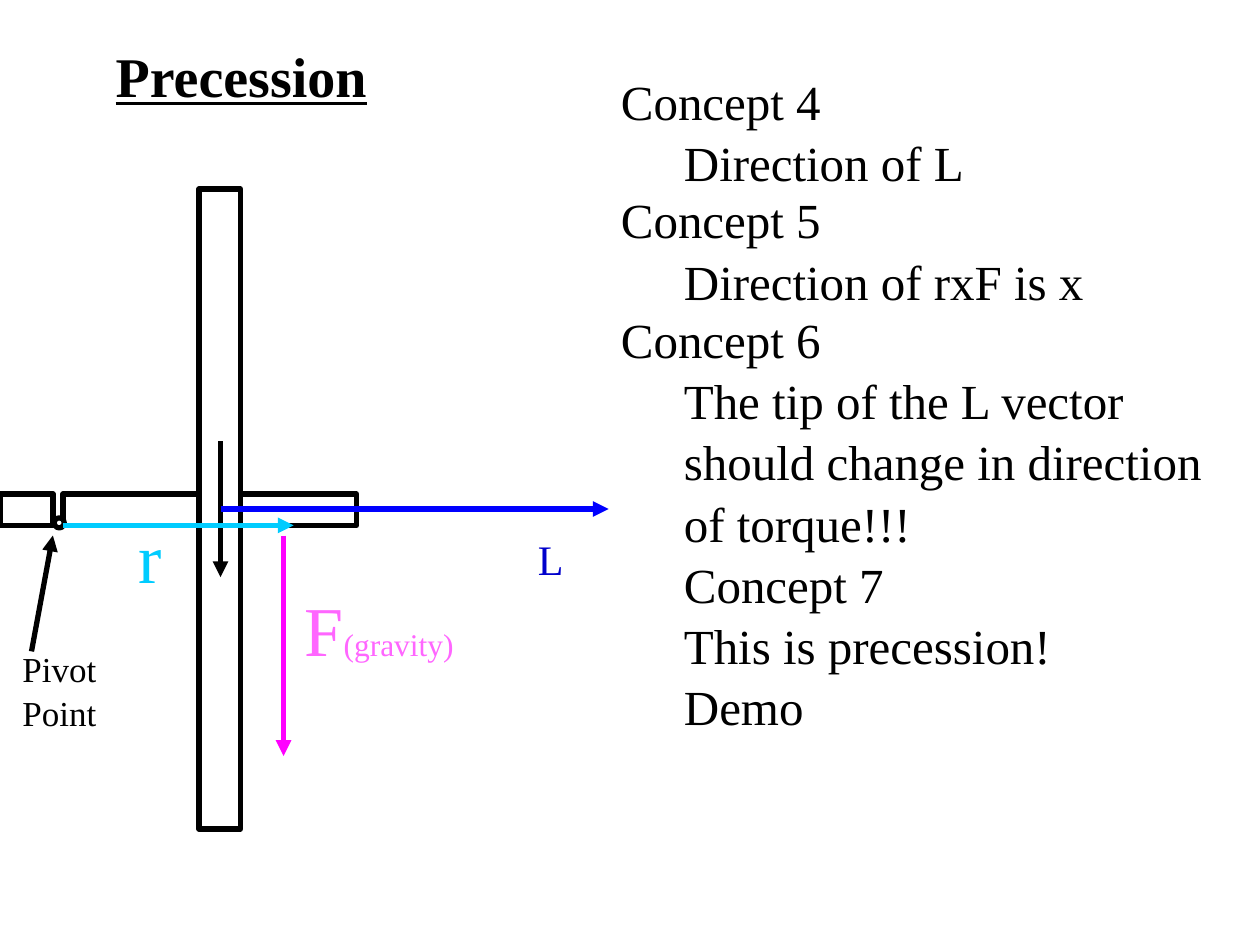
from dataclasses import dataclass

from lxml import etree
from pptx import Presentation
from pptx import util as u
from pptx.dml.color import RGBColor
from pptx.enum import shapes, text
from pptx.oxml import ns


@dataclass(frozen=True)
class Theme:
    font: str = "Times New Roman"
    black: str = "000000"
    white: str = "FFFFFF"
    momentum: str = "0000FF"
    momentum_label: str = "0000CC"
    radius: str = "00CCFF"
    force: str = "FF00FF"
    force_label: str = "FF66FF"
    title: int = 32
    body: int = 28
    symbol: int = 40
    letter: int = 24
    caption: int = 20
    subscript: int = 18
    stroke: int = 3


THEME = Theme()
RECTANGLE = shapes.MSO_SHAPE.RECTANGLE
OVAL = shapes.MSO_SHAPE.OVAL

PARTS = [
    (RECTANGLE, (0.5, 3.92, 2.33, 0.25)),
    (RECTANGLE, (1.58, 1.5, 0.33, 5.08)),
    (OVAL, (0.43, 4.11, 0.08, 0.08)),
    (RECTANGLE, (0, 3.92, 0.42, 0.25)),
]
ARROWS = [
    ((2.25, 4.25), (2.25, 6), THEME.force),
    ((1.75, 3.5), (1.75, 4.58), THEME.black),
    ((1.75, 4.04), (4.83, 4.04), THEME.momentum),
    ((0.5, 4.17), (2.33, 4.17), THEME.radius),
    ((0.25, 5.17), (0.42, 4.25), THEME.black),
]
LABELS = [
    ((2.32, 4.58, 1.39, 0.77), False, THEME.force_label,
     [("F", THEME.symbol), ("(gravity)", THEME.subscript)]),
    ((4.17, 4.17, 0.4, 0.5), False, THEME.momentum_label, [("L", THEME.letter)]),
    ((1, 4, 0.39, 0.77), False, THEME.radius, [("r", THEME.symbol)]),
    ((0.08, 5.08, 0.9, 0.77), True, THEME.black, [("Pivot Point", THEME.caption)]),
]
CONCEPTS = [
    ((4.83, 0.5, 5, 1.03), ["Concept 4", "Direction of L"]),
    ((4.83, 1.44, 5, 1.03), ["Concept 5", "Direction of rxF is x"]),
    ((4.83, 2.39, 5, 3.37), [
        "Concept 6",
        "The tip of the L vector should change in direction of torque!!!",
        "Concept 7",
        "This is precession!",
        "Demo",
    ]),
]


def color(value):
    return RGBColor.from_string(value)


def add_box(slide, bounds, wrap):
    frame = slide.shapes.add_textbox(*map(u.Inches, bounds)).text_frame
    frame.word_wrap = wrap
    frame.auto_size = text.MSO_AUTO_SIZE.SHAPE_TO_FIT_TEXT
    return frame


def add_run(paragraph, words, size, ink):
    paragraph.line_spacing = 1.04
    run = paragraph.add_run()
    run.text = words
    run.font.name = THEME.font
    run.font.size = u.Pt(size)
    run.font.color.rgb = color(ink)
    return run


def add_part(slide, kind, bounds):
    shape = slide.shapes.add_shape(kind, *map(u.Inches, bounds))
    shape.shadow.inherit = False
    shape.fill.solid()
    shape.fill.fore_color.rgb = color(THEME.white)
    shape.line.color.rgb = color(THEME.black)
    shape.line.width = u.Pt(THEME.stroke)


def add_arrow(slide, start, end, ink):
    arrow = slide.shapes.add_connector(
        shapes.MSO_CONNECTOR.STRAIGHT, *map(u.Inches, start + end))
    arrow.line.color.rgb = color(ink)
    arrow.line.width = u.Pt(THEME.stroke)
    etree.SubElement(arrow.line._get_or_add_ln(), ns.qn("a:tailEnd"), type="triangle")
    etree.SubElement(arrow._element.spPr, ns.qn("a:effectLst"))


def add_concept(slide, bounds, lines):
    frame = add_box(slide, bounds, True)
    for index, words in enumerate(lines):
        paragraph = frame.add_paragraph() if index else frame.paragraphs[0]
        if index:
            paragraph.level = 1
            properties = paragraph._p.get_or_add_pPr()
            properties.set("marL", str(u.Inches(0.5)))
            properties.set("indent", "0")
        add_run(paragraph, words, THEME.body, THEME.black)


def main():
    """Build the precession slide and save it."""
    presentation = Presentation()
    presentation.slide_width = u.Inches(10)
    presentation.slide_height = u.Inches(7.5)
    slide = presentation.slides.add_slide(presentation.slide_layouts[6])

    title = add_box(slide, (0.82, 0.26, 2.2, 0.63), False)
    run = add_run(title.paragraphs[0], "Precession", THEME.title, THEME.black)
    run.font.bold = True
    run.font.underline = True

    for kind, bounds in PARTS:
        add_part(slide, kind, bounds)
    for start, end, ink in ARROWS:
        add_arrow(slide, start, end, ink)
    for bounds, wrap, ink, runs in LABELS:
        paragraph = add_box(slide, bounds, wrap).paragraphs[0]
        for words, size in runs:
            add_run(paragraph, words, size, ink)
    for bounds, lines in CONCEPTS:
        add_concept(slide, bounds, lines)

    presentation.save("out.pptx")


if __name__ == "__main__":
    main()
